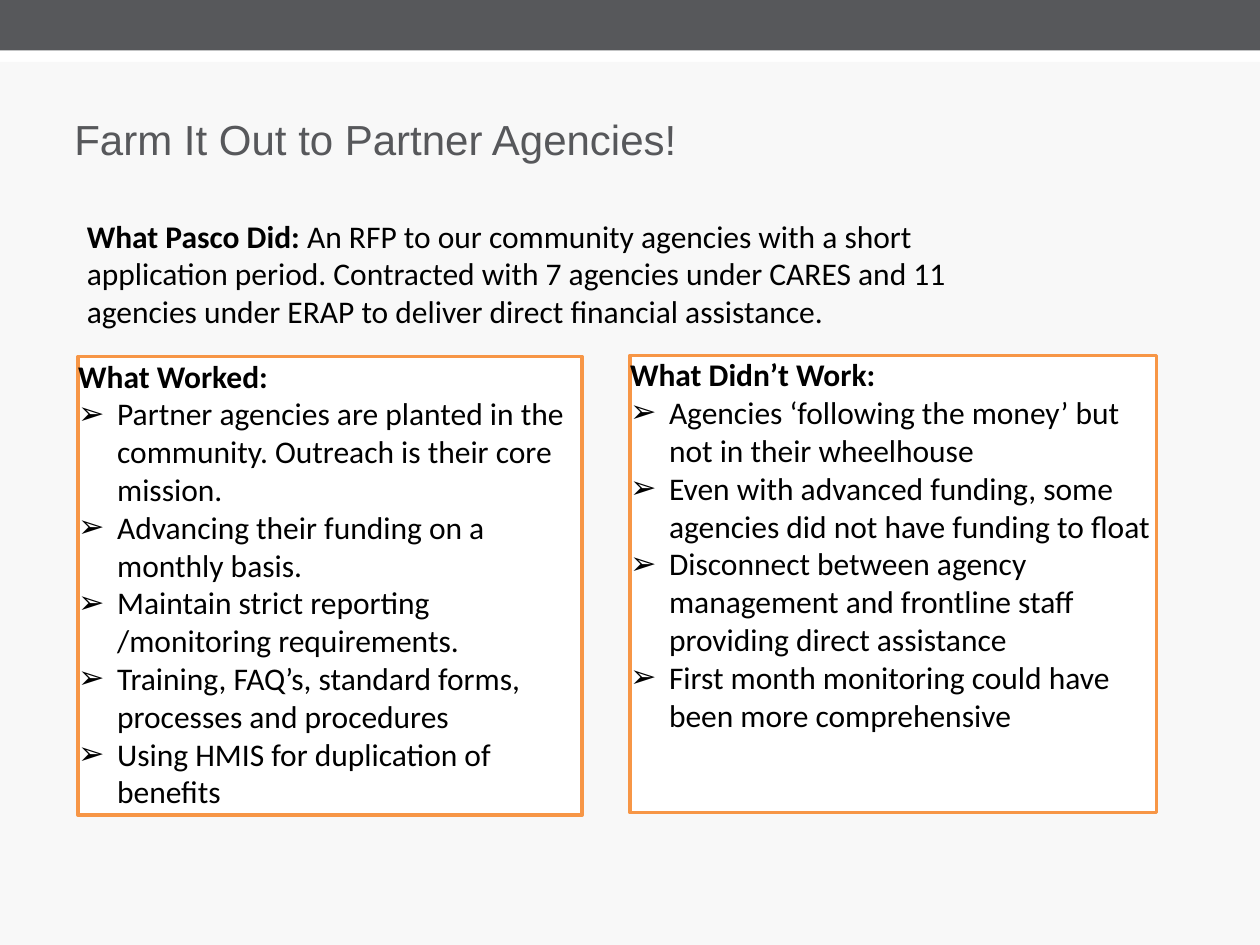
from lxml.etree import SubElement
from pptx import Presentation
from pptx.dml.color import RGBColor
from pptx.enum.shapes import MSO_SHAPE
from pptx.enum.text import MSO_ANCHOR, MSO_AUTO_SIZE, PP_ALIGN
from pptx.oxml.ns import qn
from pptx.util import Inches, Pt

WIDE, HIGH = 10, 7.5
GRAY, PALE, WHITE, BLACK, ORANGE = "57585B", "F8F8F8", "FFFFFF", "000000", "F79646"
HANG = 0.31

WORKED = [
    "Partner agencies are planted in the community. Outreach is their core mission.",
    "Advancing their funding on a monthly basis.",
    "Maintain strict reporting /monitoring requirements.",
    "Training, FAQ’s, standard forms, processes and procedures",
    "Using HMIS for duplication of benefits",
]
FAILED = [
    "Agencies ‘following the money’ but not in their wheelhouse",
    "Even with advanced funding, some agencies did not have funding to float",
    "Disconnect between agency management and frontline staff providing direct assistance",
    "First month monitoring could have been more comprehensive",
]


def paint(fmt, color):
    """Give a fill a solid colour."""
    fmt.solid()
    fmt.fore_color.rgb = RGBColor.from_string(color)


def style(run, size=18, name="Calibri", color=BLACK, bold=False):
    font = run.font
    font.size, font.name, font.bold = Pt(size), name, bold
    font.color.rgb = RGBColor.from_string(color)


def place(shape, left, top, width, height):
    shape.left, shape.top = Inches(left), Inches(top)
    shape.width, shape.height = Inches(width), Inches(height)


def frame(shape, inset=0):
    """Set up a top-anchored, wrapping text frame."""
    text = shape.text_frame
    text.word_wrap = True
    text.auto_size = MSO_AUTO_SIZE.NONE
    text.vertical_anchor = MSO_ANCHOR.TOP
    text.margin_left = text.margin_right = Inches(inset)
    text.margin_top = text.margin_bottom = Inches(inset / 2)
    return text


def band(slide, layer, top, bottom, color):
    """Draw a full-width strip behind the placeholders."""
    strip = slide.shapes.add_shape(
        MSO_SHAPE.RECTANGLE, 0, Inches(top), Inches(WIDE), Inches(bottom - top))
    strip.shadow.inherit = False
    paint(strip.fill, color)
    strip.line.fill.background()
    slide.shapes.element.insert(2 + layer, strip.element)


def bullet(para, char=None):
    """Hang the paragraph on a bullet, or make it flush without one."""
    para.space_before = Pt(0)
    props = para._p.get_or_add_pPr()
    indent = Inches(HANG) if char else 0
    props.set("marL", str(indent))
    props.set("indent", str(-indent))
    if char:
        SubElement(props, qn("a:buChar")).set("char", char)
    else:
        SubElement(props, qn("a:buNone"))


def panel(shape, box, head, items):
    """Fill an outlined body placeholder with a heading and a list."""
    place(shape, *box)
    paint(shape.fill, WHITE)
    paint(shape.line.fill, ORANGE)
    shape.line.width = Pt(2)
    text = frame(shape)
    text.text = "\n".join([head] + items)
    for row, para in enumerate(text.paragraphs):
        bullet(para, "➢" if row else None)
        style(para.runs[0], bold=row == 0)


def title(shape, words):
    place(shape, 0.59, 0.9, 8.83, 0.4)
    text = frame(shape)
    text.text = words
    para = text.paragraphs[0]
    para.alignment = PP_ALIGN.LEFT
    style(para.runs[0], 24, "Arial", GRAY)


def intro(slide, label, words):
    box = slide.shapes.add_textbox(0, 0, 0, 0)
    place(box, 0.59, 1.67, 7.91, 1.01)
    para = frame(box, 0.1).paragraphs[0]
    for part, bold in ((label, True), (words, False)):
        run = para.add_run()
        run.text = part
        style(run, bold=bold)


def main():
    deck = Presentation()
    deck.slide_width, deck.slide_height = Inches(WIDE), Inches(HIGH)
    slide = deck.slides.add_slide(deck.slide_layouts[3])
    head, left, right = list(slide.placeholders)[:3]

    # Backdrop, from back to front
    bands = [(0.49, HIGH, PALE), (0.4, 0.49, WHITE), (0, 0.4, GRAY)]
    for layer, strip in enumerate(bands):
        band(slide, layer, *strip)

    # Title and the two lists
    title(head, "Farm It Out to Partner Agencies!")
    panel(left, (0.62, 2.83, 4, 3.64), "What Worked:", WORKED)
    panel(right, (5, 2.82, 4.18, 3.63), "What Didn’t Work:", FAILED)

    # Opening summary
    intro(slide, "What Pasco Did: ",
          "An RFP to our community agencies with a short application period. "
          "Contracted with 7 agencies under CARES and 11 agencies under ERAP "
          "to deliver direct financial assistance.")
    deck.save("out.pptx")


if __name__ == "__main__":
    main()
